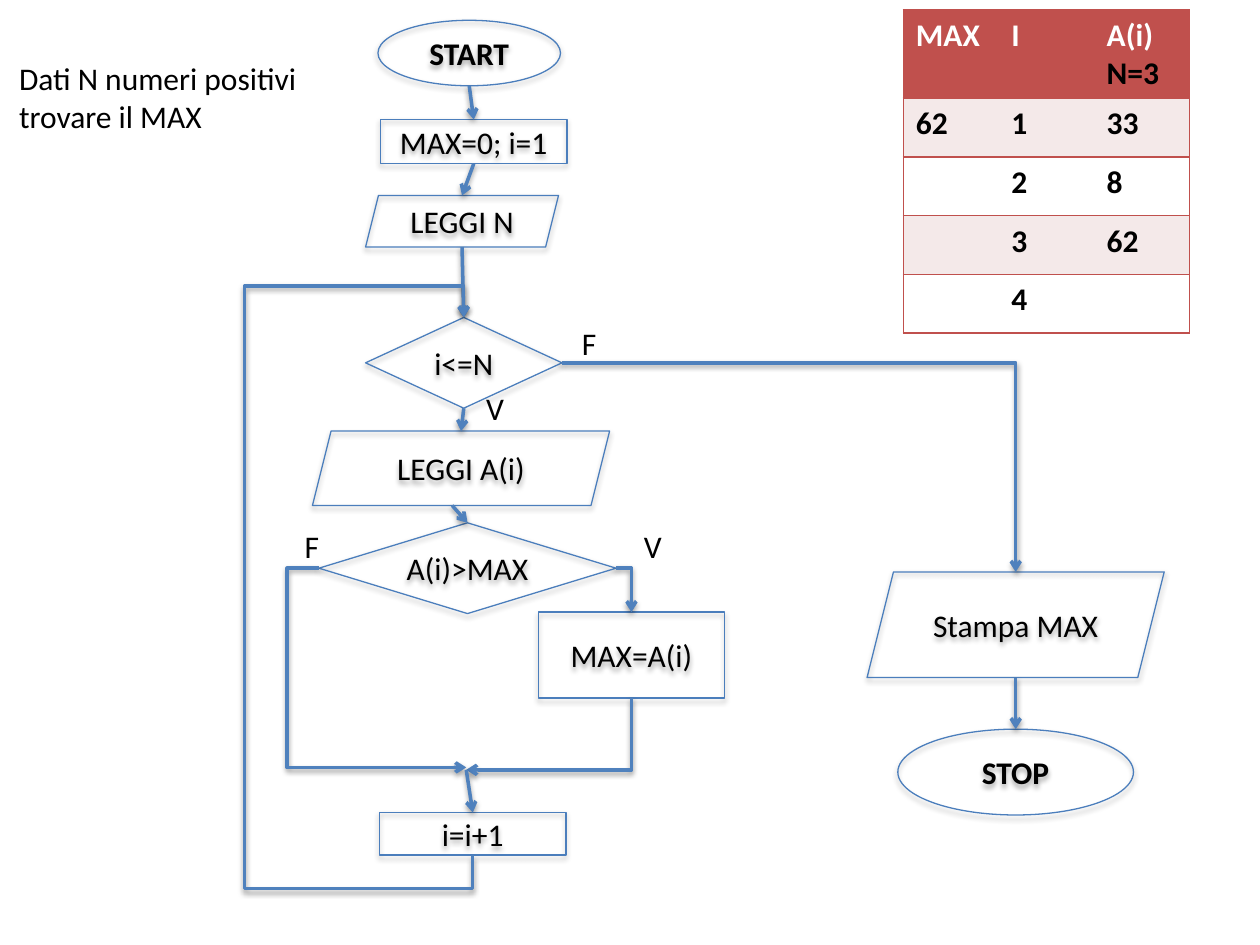
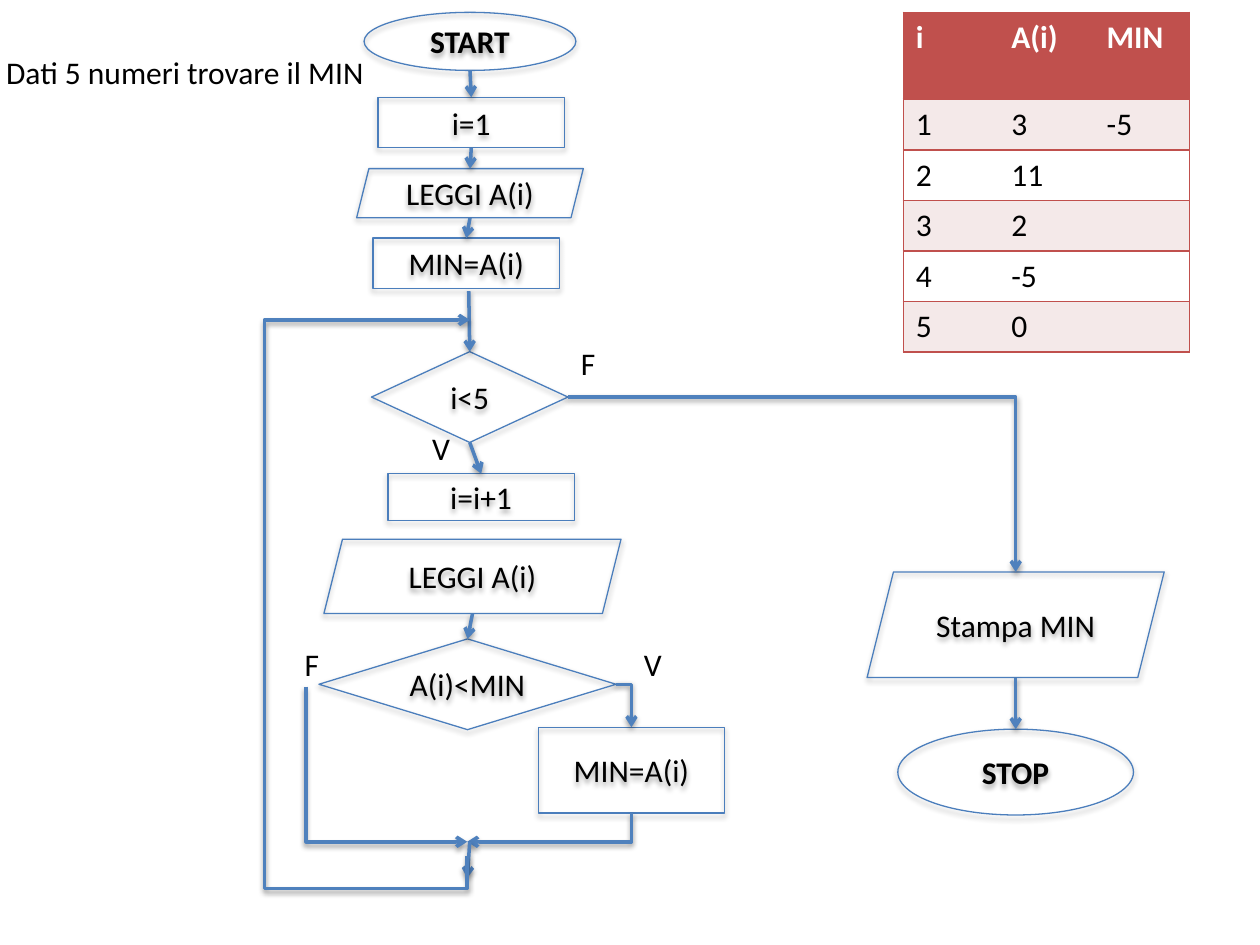
from dataclasses import dataclass

from pptx import Presentation
from pptx.dml.color import RGBColor
from pptx.enum.shapes import MSO_CONNECTOR, MSO_SHAPE
from pptx.enum.text import MSO_ANCHOR, PP_ALIGN
from pptx.oxml import parse_xml
from pptx.oxml.ns import nsdecls, qn
from pptx.util import Cm, Pt

FONT = "Calibri"
BLACK = RGBColor(0x00, 0x00, 0x00)
WHITE = RGBColor(0xFF, 0xFF, 0xFF)
OUTLINE = RGBColor(0x4B, 0x7E, 0xBC)
ARROW = RGBColor(0x4F, 0x81, 0xBD)
RED = RGBColor(0xC0, 0x50, 0x4D)
BAND = RGBColor(0xF4, 0xE9, 0xE9)

TERMINAL = MSO_SHAPE.OVAL
ACTION = MSO_SHAPE.RECTANGLE
DATA = MSO_SHAPE.PARALLELOGRAM
TEST = MSO_SHAPE.DIAMOND


@dataclass
class Box:
    """A region of the slide, in centimetres."""
    left: float
    top: float
    width: float
    height: float

    def at(self, x, y):
        """Turn a place inside the box into a place on the slide."""
        return Cm(self.left + x), Cm(self.top + y)


OUTPUT_BOX = Box(17.48, 11.53, 5.99, 4.9)


def write(paragraph, text, color=BLACK, bold=False):
    """Add one run in the common text style."""
    run = paragraph.add_run()
    run.text = text
    run.font.name = FONT
    run.font.size = Pt(18)
    run.font.bold = bold
    run.font.color.rgb = color


def cast_shadow(shape, distance, opacity):
    """Give a shape or line a soft shadow straight below it."""
    shape._element.spPr.append(parse_xml(
        f'<a:effectLst {nsdecls("a")}><a:outerShdw blurRad="{Pt(3.1)}" dist="{Pt(distance)}" '
        f'dir="5400000" rotWithShape="0"><a:srgbClr val="{BLACK}"><a:alpha val="{opacity * 1000}"/>'
        '</a:srgbClr></a:outerShdw></a:effectLst>'))


def top(step):
    """Middle of the upper edge."""
    return step.left + step.width // 2, step.top


def bottom(step):
    """Middle of the lower edge."""
    return step.left + step.width // 2, step.top + step.height


def left_tip(step):
    """Middle of the left edge."""
    return step.left, step.top + step.height // 2


def right_tip(step):
    """Middle of the right edge."""
    return step.left + step.width, step.top + step.height // 2


def add_step(slide, box, kind, text, x, y, width, height):
    """Draw one outlined flow chart step with its text."""
    step = slide.shapes.add_shape(kind, *box.at(x, y), Cm(width), Cm(height))
    step.fill.background()
    step.line.color.rgb = OUTLINE
    step.line.width = Pt(0.75)
    cast_shadow(step, 1.8, 35)
    step.text_frame.vertical_anchor = MSO_ANCHOR.MIDDLE
    paragraph = step.text_frame.paragraphs[0]
    paragraph.alignment = PP_ALIGN.CENTER
    write(paragraph, text, bold=kind == TERMINAL)
    return step


def add_route(slide, *points):
    """Draw an arrow through the points, straight or bent."""
    if len(points) == 2:
        route = slide.shapes.add_connector(MSO_CONNECTOR.STRAIGHT, *points[0], *points[1])
    else:
        builder = slide.shapes.build_freeform(*points[0])
        builder.add_line_segments(points[1:], close=False)
        route = builder.convert_to_shape()
        route.fill.background()
    route.line.color.rgb = ARROW
    route.line.width = Pt(2)
    outline = route._element.spPr.find(qn("a:ln"))
    outline.append(parse_xml(f'<a:tailEnd {nsdecls("a")} type="arrow"/>'))
    cast_shadow(route, 1.6, 38)


def add_label(slide, box, text, x, y):
    """Write the answer beside a branch of a test."""
    label = slide.shapes.add_textbox(*box.at(x, y), Cm(0.85), Cm(1.02))
    label.text_frame.word_wrap = False
    write(label.text_frame.paragraphs[0], text)


def add_problem(slide, box, lines):
    """Put the statement of the problem in the title placeholder."""
    title = slide.shapes.title
    title.left, title.top = box.at(0, 0)
    title.width, title.height = Cm(box.width), Cm(box.height)
    frame = title.text_frame
    frame.word_wrap = False
    frame.vertical_anchor = MSO_ANCHOR.TOP
    for number, line in enumerate(lines):
        paragraph = frame.add_paragraph() if number else frame.paragraphs[0]
        paragraph.alignment = PP_ALIGN.LEFT
        write(paragraph, line)


def add_loop(slide, box, steps, labels, merge):
    """Draw the steps and labels, and the branch that updates the result."""
    drawn = {name: add_step(slide, box, *step) for name, step in steps.items()}
    for label in labels:
        add_label(slide, box, *label)
    compare, update = drawn["compare"], drawn["update"]
    add_route(slide, right_tip(compare), (top(update)[0], right_tip(compare)[1]), top(update))
    merge_point = box.at(*merge)
    add_route(slide, bottom(update), (bottom(update)[0], merge_point[1]), merge_point)
    return drawn


def add_chain(slide, drawn, *names):
    """Join each named step to the next one below it."""
    for upper, lower in zip(names, names[1:]):
        add_route(slide, bottom(drawn[upper]), top(drawn[lower]))


def add_output(slide, box, text, loop_test):
    """Draw the branch that prints the result and stops."""
    stamp = add_step(slide, box, DATA, text, 0, 0, box.width, 2.13)
    stop = add_step(slide, box, TERMINAL, "STOP", 0.62, box.height - 1.73, 4.75, 1.73)
    start = right_tip(loop_test)
    add_route(slide, start, (top(stamp)[0], start[1]), top(stamp))
    add_route(slide, bottom(stamp), top(stop))


def set_borders(cell, visible):
    """Show red lines on the given sides and none on the others."""
    for side in "LRTB":
        paint = f'<a:solidFill><a:srgbClr val="{RED}"/></a:solidFill>' if side in visible else "<a:noFill/>"
        cell._tc.get_or_add_tcPr().append(
            parse_xml(f'<a:ln{side} {nsdecls("a")} w="{Pt(1)}">{paint}</a:ln{side}>'))


def add_trace(slide, box, rows, header_height, bold):
    """Draw the trace table of the variables, with a red header and bands."""
    columns = len(rows[0])
    table = slide.shapes.add_table(len(rows), columns, *box.at(0, 0), Cm(box.width), Cm(box.height)).table
    row_height = (box.height - header_height) / (len(rows) - 1)
    for column in table.columns:
        column.width = Cm(box.width / columns)
    for r, values in enumerate(rows):
        table.rows[r].height = Cm(row_height if r else header_height)
        for c, value in enumerate(values):
            cell = table.cell(r, c)
            set_borders(cell, "TB" + "L" * (c == 0) + "R" * (c == columns - 1))
            cell.fill.solid()
            cell.fill.fore_color.rgb = RED if r == 0 else BAND if r % 2 else WHITE
            if value:
                write(cell.text_frame.paragraphs[0], value, BLACK if r else WHITE, bold or r == 0)
    return table


def build_max(slide):
    """Slide on the largest of N positive numbers."""
    add_problem(slide, Box(0.13, 1.07, 6.17, 1.8), ["Dati N numeri positivi", "trovare il MAX"])
    box = Box(4.93, 0.41, 9.68, 17.5)
    steps = {
        "start": (TERMINAL, "START", 2.69, 0, 3.68, 1.32),
        "init": (ACTION, "MAX=0; i=1", 2.74, 2, 3.76, 0.89),
        "read count": (DATA, "LEGGI N", 2.44, 3.53, 3.89, 1.04),
        "test": (TEST, "i<=N", 2.44, 5.99, 3.96, 1.83),
        "read": (DATA, "LEGGI A(i)", 1.37, 8.28, 5.99, 1.5),
        "compare": (TEST, "A(i)>MAX", 1.5, 10.13, 5.99, 1.83),
        "update": (ACTION, "MAX=A(i)", 5.92, 11.93, 3.76, 1.73),
        "next": (ACTION, "i=i+1", 2.72, 15.97, 3.76, 0.86),
    }
    labels = [("F", 0.96, 10.08), ("V", 7.8, 10.08), ("V", 4.62, 7.31), ("F", 6.55, 5.99)]
    merge = (4.47, 15.11)
    drawn = add_loop(slide, box, steps, labels, merge)
    add_chain(slide, drawn, "start", "init", "read count", "test", "read")
    read_x, read_y = bottom(drawn["read"])
    add_route(slide, (read_x - Cm(0.18), read_y), top(drawn["compare"]))
    skip = left_tip(drawn["compare"])
    add_route(slide, skip, (box.at(0.86, 0)[0], skip[1]), box.at(0.86, 15.06), box.at(4.47, 15.06))
    add_route(slide, box.at(*merge), top(drawn["next"]))
    end, test = bottom(drawn["next"]), top(drawn["test"])
    add_route(slide, end, (end[0], box.at(0, box.height)[1]), box.at(0, box.height),
              box.at(0, 5.36), (test[0], box.at(0, 5.36)[1]), test)
    add_output(slide, OUTPUT_BOX, "Stampa MAX", drawn["test"])
    rows = [("MAX", "I", "A(i)"), ("62", "1", "33"), ("", "2", "8"), ("", "3", "62"), ("", "4", "")]
    trace = add_trace(slide, Box(18.21, 0.2, 5.77, 6.52), rows, 1.78, True)
    write(trace.cell(0, 2).text_frame.add_paragraph(), "N=3", bold=True)


def build_min(slide):
    """Slide on the smallest of five numbers."""
    add_problem(slide, Box(-0.13, 0.94, 7.8, 1.02), ["Dati 5 numeri trovare il MIN"])
    box = Box(5.33, 0.25, 9.28, 17.66)
    steps = {
        "start": (TERMINAL, "START", 2.01, 0, 4.27, 1.17),
        "init": (ACTION, "i=1", 2.29, 1.71, 3.76, 1.02),
        "read first": (DATA, "LEGGI A(i)", 1.86, 3.15, 4.57, 0.99),
        "first": (ACTION, "MIN=A(i)", 2.19, 4.55, 3.76, 1.02),
        "test": (TEST, "i<5", 2.16, 6.84, 3.96, 1.83),
        "next": (ACTION, "i=i+1", 2.49, 9.3, 3.76, 0.94),
        "read": (DATA, "LEGGI A(i)", 1.2, 10.62, 5.99, 1.5),
        "compare": (TEST, "A(i)<MIN", 1.1, 12.63, 5.99, 1.83),
        "update": (ACTION, "MIN=A(i)", 5.52, 14.41, 3.76, 1.73),
    }
    labels = [("F", 0.56, 12.63), ("V", 7.4, 12.63), ("V", 3.13, 8.28), ("F", 6.13, 6.56)]
    merge = (4.09, 16.72)
    drawn = add_loop(slide, box, steps, labels, merge)
    add_chain(slide, drawn, "start", "init", "read first", "first")
    add_route(slide, box.at(4.12, 5.62), top(drawn["test"]))
    add_chain(slide, drawn, "test", "next")
    add_chain(slide, drawn, "read", "compare")
    add_route(slide, box.at(0.84, 13.59), box.at(0.84, merge[1]), box.at(*merge))
    add_route(slide, box.at(4.14, merge[1]), box.at(4.09, 17.45))
    add_route(slide, box.at(4.09, 17), box.at(4.09, box.height), box.at(0, box.height),
              box.at(0, 6.2), box.at(4.14, 6.2))
    add_output(slide, OUTPUT_BOX, "Stampa MIN", drawn["test"])
    rows = [("i", "A(i)", "MIN"), ("1", "3", "-5"), ("2", "11", ""), ("3", "2", ""),
            ("4", "-5", ""), ("5", "0", "")]
    add_trace(slide, Box(18.21, 0.25, 5.77, 6.85), rows, 1.75, False)


def main():
    """Build both slides and save them."""
    presentation = Presentation()
    presentation.slide_width, presentation.slide_height = Cm(25.4), Cm(19.05)
    title_only = presentation.slide_layouts[5]
    for build in (build_max, build_min):
        build(presentation.slides.add_slide(title_only))
    presentation.save("out.pptx")


if __name__ == "__main__":
    main()
